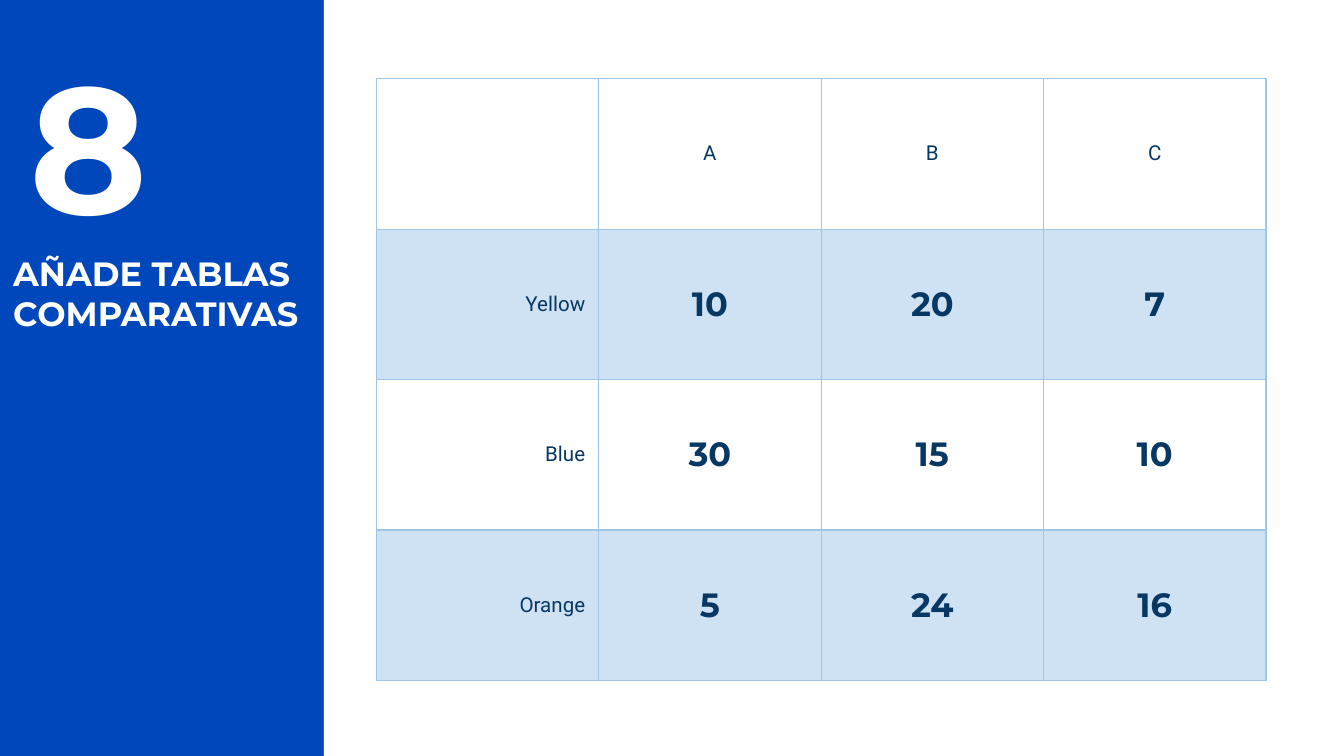
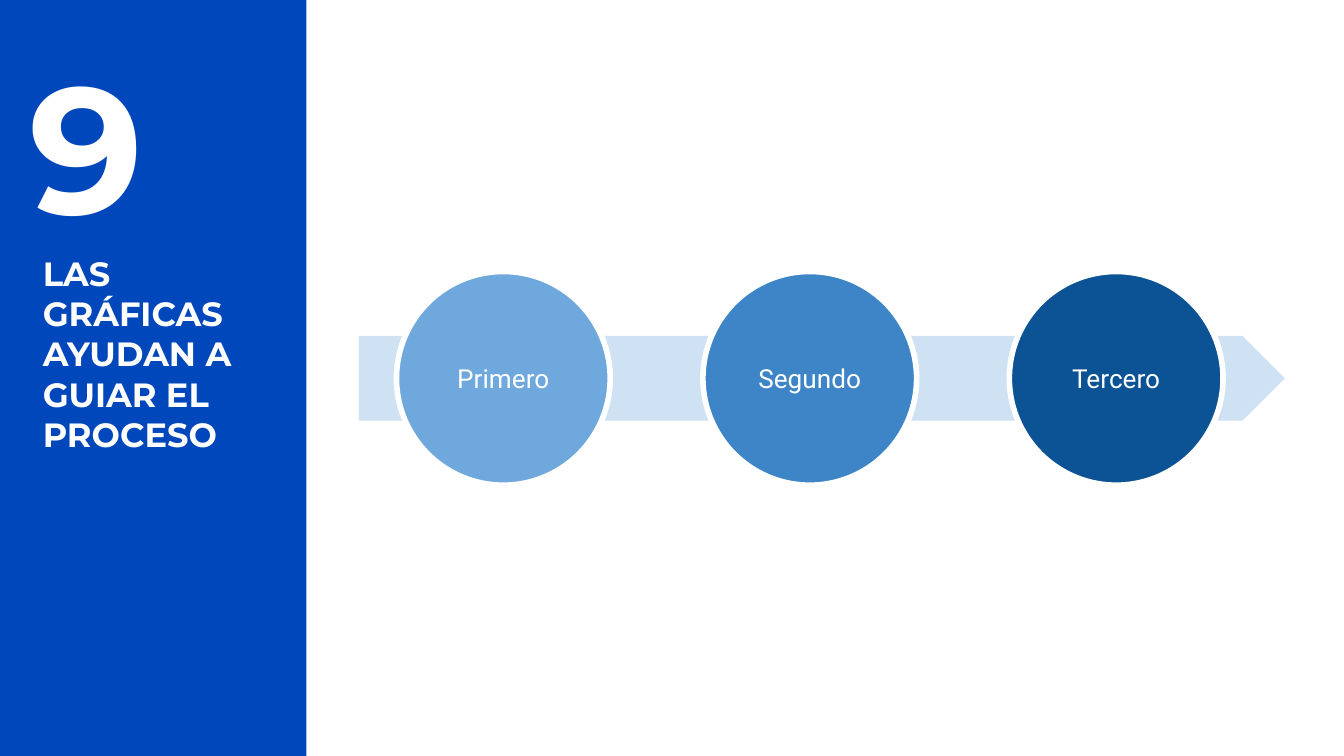
import pptx
import pptx.dml.color
import pptx.enum.shapes
import pptx.enum.text
import pptx.oxml
import pptx.oxml.ns
import pptx.util

PX = 4572  # 200 px to the inch
SLIDE_WIDTH, SLIDE_HEIGHT = 2000, 1125

RGBColor = pptx.dml.color.RGBColor
BLUE = RGBColor(0x00, 0x47, 0xBB)
WHITE = RGBColor(0xFF, 0xFF, 0xFF)
NAVY = RGBColor(0x07, 0x37, 0x63)
PALE = RGBColor(0xCF, 0xE2, 0xF3)
BORDER = RGBColor(0x9F, 0xC5, 0xE8)
SKY = RGBColor(0x6F, 0xA8, 0xDC)
MEDIUM = RGBColor(0x3D, 0x85, 0xC6)
DEEP = RGBColor(0x0B, 0x53, 0x94)

SHAPE = pptx.enum.shapes.MSO_SHAPE
ALIGN = pptx.enum.text.PP_ALIGN
MIDDLE = pptx.enum.text.MSO_ANCHOR.MIDDLE

NUMBER = {"name": "Montserrat", "size": pptx.util.Pt(96), "bold": True}
HEADING = {"name": "Montserrat", "size": pptx.util.Pt(18), "bold": True}
LABEL = {"name": "Roboto", "size": pptx.util.Pt(11), "bold": False}
STEP = {"name": "Roboto", "size": pptx.util.Pt(14), "bold": False}


def write(frame, lines, font_format, color, align=ALIGN.LEFT):
    """Fill the first paragraph of a frame, with a line break between lines."""
    frame.word_wrap = True
    para = frame.paragraphs[0]
    para.alignment = align
    for index, line in enumerate(lines):
        if index:
            para.add_line_break()
        span = para.add_run()
        span.text = line
        for name, value in font_format.items():
            setattr(span.font, name, value)
        span.font.color.rgb = color


def add_block(page, kind, left, top, width, height, fill):
    """Add a flat preset shape without an outline."""
    block = page.shapes.add_shape(kind, left * PX, top * PX, width * PX, height * PX)
    block.shadow.inherit = False
    block.fill.solid()
    block.fill.fore_color.rgb = fill
    block.line.fill.background()
    return block


deck = pptx.Presentation()
deck.slide_width = SLIDE_WIDTH * PX
deck.slide_height = SLIDE_HEIGHT * PX

# Shared frame: blue side band, white panel, large number and heading
sections = [
    # number, heading lines, band width, heading left, heading width
    ("8", ["AÑADE TABLAS", "COMPARATIVAS"], 482, 0, 482),
    ("9", ["LAS GRÁFICAS AYUDAN A GUIAR EL PROCESO"], 456, 44, 374),
]
pages = []
for number, heading, band_width, heading_left, heading_width in sections:
    page = deck.slides.add_slide(deck.slide_layouts[6])
    page.background.fill.solid()
    page.background.fill.fore_color.rgb = BLUE
    add_block(page, SHAPE.RECTANGLE, band_width, 0,
              SLIDE_WIDTH - band_width, SLIDE_HEIGHT, WHITE)
    for lines, font_format, left, top, width, height in [
        (heading, HEADING, heading_left, 356, heading_width, 188),
        ([number], NUMBER, 24, 32, 396, 274),
    ]:
        box = page.shapes.add_textbox(left * PX, top * PX, width * PX, height * PX)
        for side in ("left", "top", "right", "bottom"):
            setattr(box.text_frame, f"margin_{side}", 20 * PX)
        write(box.text_frame, lines, font_format, WHITE)
    pages.append(page)
table_page, process_page = pages

# Comparison table
rows = [
    ["", "A", "B", "C"],
    ["Yellow", "10", "20", "7"],
    ["Blue", "30", "15", "10"],
    ["Orange", "5", "24", "16"],
]
COLUMN_WIDTH, ROW_HEIGHT = 331, 224
table = table_page.shapes.add_table(
    len(rows), len(rows[0]), 560 * PX, 117 * PX,
    len(rows[0]) * COLUMN_WIDTH * PX, len(rows) * ROW_HEIGHT * PX).table
table.first_row = False
table.horz_banding = False
for column in table.columns:
    column.width = COLUMN_WIDTH * PX
for row_index, row in enumerate(rows):
    table.rows[row_index].height = ROW_HEIGHT * PX
    for column_index, value in enumerate(row):
        cell = table.cell(row_index, column_index)
        cell.vertical_anchor = MIDDLE
        cell.margin_left = cell.margin_right = 20 * PX
        cell.margin_top = cell.margin_bottom = 14 * PX
        for edge in ("lnL", "lnR", "lnT", "lnB"):
            cell.fill  # makes sure that the cell has properties
            cell._tc.get_or_add_tcPr().append(pptx.oxml.parse_xml(
                f'<a:{edge} {pptx.oxml.ns.nsdecls("a")} w="9525"><a:solidFill>'
                f'<a:srgbClr val="{BORDER}"/></a:solidFill></a:{edge}>'))
        if row_index % 2:
            cell.fill.solid()
            cell.fill.fore_color.rgb = PALE
        else:
            cell.fill.background()
        if value:
            is_label = row_index == 0 or column_index == 0
            write(cell.text_frame, [value], LABEL if is_label else HEADING, NAVY,
                  ALIGN.CENTER if column_index else ALIGN.RIGHT)

# Process: three steps along an arrow
arrow = add_block(process_page, SHAPE.PENTAGON, 534, 500, 1378, 126, PALE)
arrow.adjustments[0] = 0.5
STEP_SIZE, STEP_PITCH = 318, 456
steps = [("Primero", SKY), ("Segundo", MEDIUM), ("Tercero", DEEP)]
for index, (name, color) in enumerate(steps):
    circle = add_block(process_page, SHAPE.OVAL, 590 + index * STEP_PITCH, 404,
                       STEP_SIZE, STEP_SIZE, color)
    circle.line.color.rgb = WHITE
    circle.line.width = pptx.util.Pt(3)
    circle.text_frame.vertical_anchor = MIDDLE
    write(circle.text_frame, [name], STEP, WHITE, ALIGN.CENTER)

deck.save("out.pptx")
